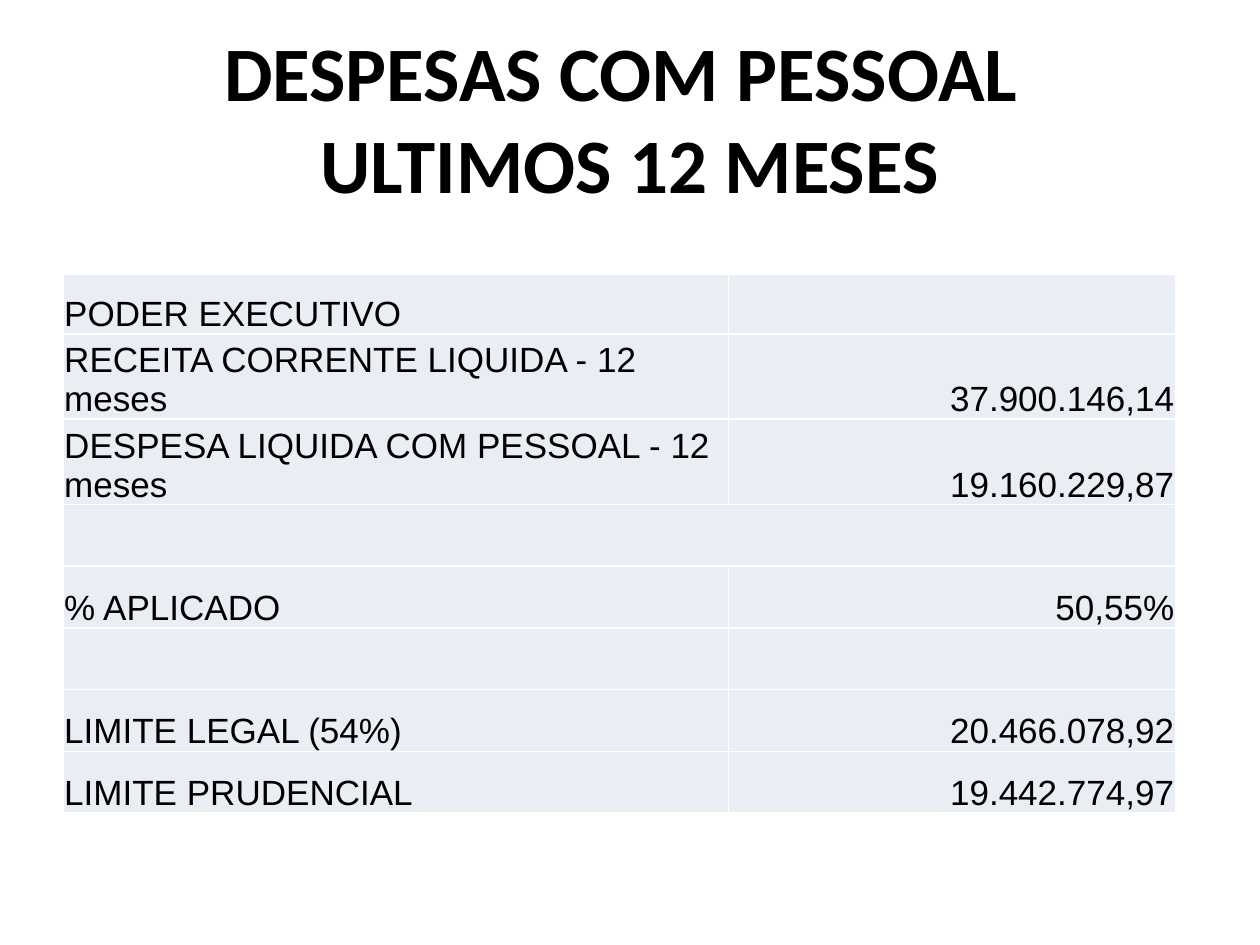
from pptx import Presentation
from pptx.dml.color import RGBColor
from pptx.enum.text import MSO_ANCHOR, PP_ALIGN
from pptx.oxml import parse_xml
from pptx.oxml.ns import nsdecls
from pptx.util import Inches, Pt

BLACK = RGBColor(0x00, 0x00, 0x00)
WHITE = RGBColor(0xFF, 0xFF, 0xFF)
PALE_BLUE = RGBColor(0xE9, 0xED, 0xF4)

TITLE_LINES = ["DESPESAS COM PESSOAL ", "ULTIMOS 12 MESES"]
EXPENSES = [
    ("PODER EXECUTIVO", ""),
    ("RECEITA CORRENTE LIQUIDA - 12 meses", "37.900.146,14"),
    ("DESPESA LIQUIDA COM PESSOAL - 12 meses", "19.160.229,87"),
    ("", ""),
    ("% APLICADO", "50,55%"),
    ("", ""),
    ("LIMITE LEGAL (54%)", "20.466.078,92"),
    ("LIMITE PRUDENCIAL", "19.442.774,97"),
]
SEPARATOR_ROW = 3
COLUMN_WIDTHS = [5.28, 3.55]
ROW_HEIGHTS = [0.47] + [0.49] * 7


class ExpensePage:
    title_font = "Calibri"
    table_font = "Arial"

    def __init__(self, deck):
        self.page = deck.slides.add_slide(deck.slide_layouts[6])

    def add_span(self, para, text, font, size, bold=False):
        span = para.add_run()
        span.text = text
        span.font.name = font
        span.font.size = Pt(size)
        span.font.bold = bold
        span.font.color.rgb = BLACK

    def add_title(self, lines, left, top, width, height):
        box = self.page.shapes.add_textbox(
            Inches(left), Inches(top), Inches(width), Inches(height))
        frame = box.text_frame
        frame.word_wrap = True
        frame.vertical_anchor = MSO_ANCHOR.MIDDLE
        para = frame.paragraphs[0]
        para.alignment = PP_ALIGN.CENTER
        for index, line in enumerate(lines):
            if index:
                para.add_line_break()
            self.add_span(para, line, self.title_font, 44, True)

    def add_borders(self, cell):
        properties = cell._tc.get_or_add_tcPr()
        for side in ("lnL", "lnR", "lnT", "lnB"):
            properties.append(parse_xml(
                f'<a:{side} {nsdecls("a")} w="{Pt(1)}"><a:solidFill>'
                f'<a:srgbClr val="{WHITE}"/></a:solidFill></a:{side}>'))

    def style_cell(self, cell, text, alignment):
        self.add_borders(cell)
        cell.fill.solid()
        cell.fill.fore_color.rgb = PALE_BLUE
        if text:
            cell.vertical_anchor = MSO_ANCHOR.BOTTOM
            cell.margin_left = cell.margin_right = cell.margin_top = Inches(0.01)
            cell.margin_bottom = 0
            para = cell.text_frame.paragraphs[0]
            para.alignment = alignment
            self.add_span(para, text, self.table_font, 20)

    def add_table(self, rows, left, top):
        table = self.page.shapes.add_table(
            len(rows), len(COLUMN_WIDTHS), Inches(left), Inches(top),
            Inches(sum(COLUMN_WIDTHS)), Inches(sum(ROW_HEIGHTS))).table
        table.first_row = False
        table.horz_banding = False
        for column, width in zip(table.columns, COLUMN_WIDTHS):
            column.width = Inches(width)
        for row, height, texts in zip(table.rows, ROW_HEIGHTS, rows):
            row.height = Inches(height)
            for cell, text, alignment in zip(
                    row.cells, texts, (PP_ALIGN.LEFT, PP_ALIGN.RIGHT)):
                self.style_cell(cell, text, alignment)
        table.cell(SEPARATOR_ROW, 0).merge(table.cell(SEPARATOR_ROW, 1))


def main():
    deck = Presentation()
    deck.slide_width = Inches(10)
    deck.slide_height = Inches(7.5)
    page = ExpensePage(deck)
    page.add_title(TITLE_LINES, 0.5, 0.3, 9, 1.25)
    page.add_table(EXPENSES, 0.5, 2.18)
    deck.save("out.pptx")


if __name__ == "__main__":
    main()
